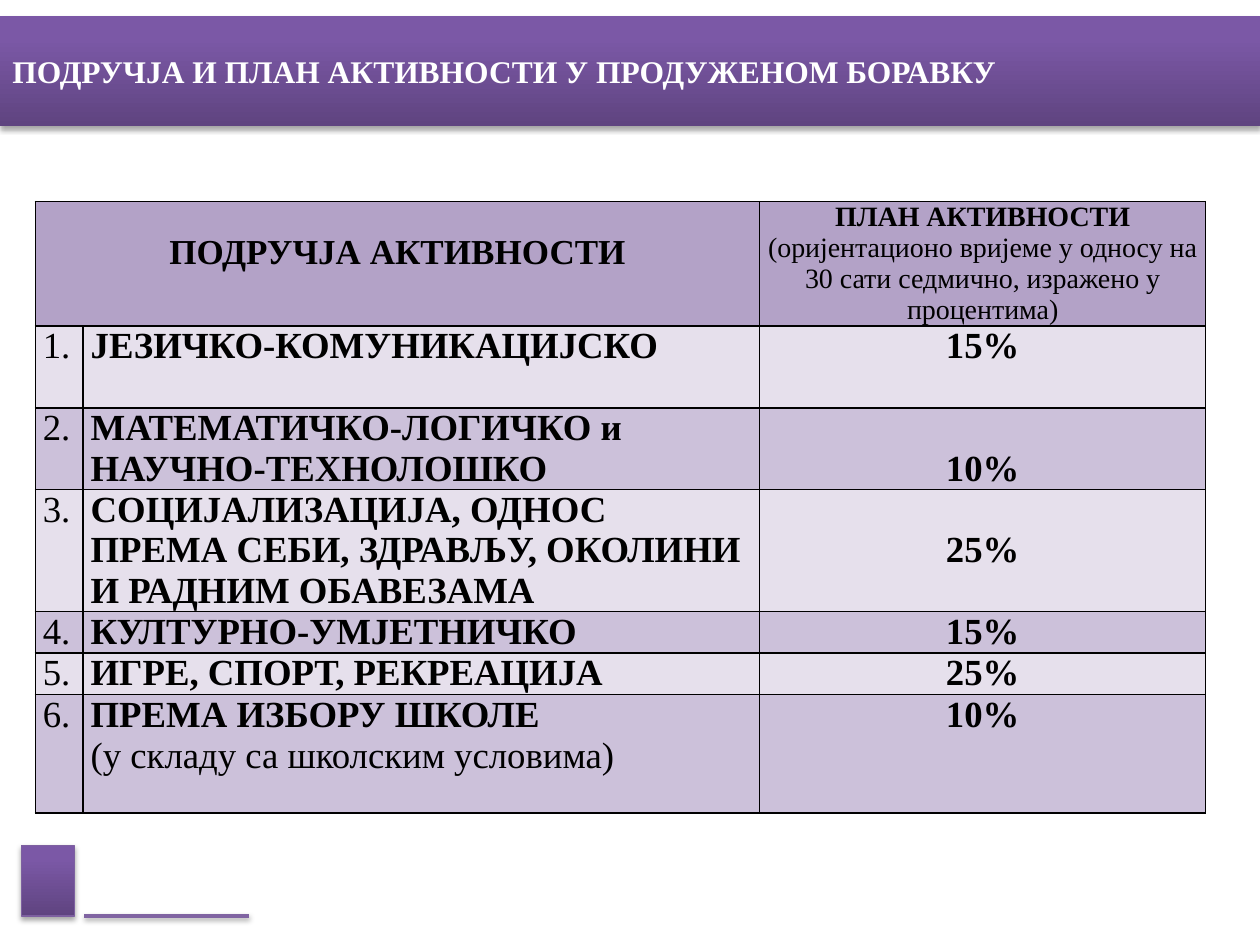
from lxml.etree import SubElement
from pptx import Presentation
from pptx.dml.color import RGBColor
from pptx.enum.shapes import MSO_CONNECTOR, MSO_SHAPE
from pptx.enum.text import MSO_ANCHOR, PP_ALIGN
from pptx.oxml import parse_xml
from pptx.oxml.ns import nsdecls, qn
from pptx.util import Inches, Pt

FONT = "Times New Roman"
COLUMNS = [0.38, 5.37, 3.54]
ROWS = [0.98, 0.65, 0.65, 0.97, 0.33, 0.33, 0.94]
BANDS = ["E6E0EC", "CCC1DA"]
GRADIENT = [(0, "5F4480"), (80, "7B58A6"), (100, "7C57A8")]
TOP, MIDDLE, BOTTOM = MSO_ANCHOR.TOP, MSO_ANCHOR.MIDDLE, MSO_ANCHOR.BOTTOM
AREAS = [
    (["ЈЕЗИЧКО-КОМУНИКАЦИЈСКО"], "15%", TOP),
    (["МАТЕМАТИЧКО-ЛОГИЧКО и НАУЧНО-ТЕХНОЛОШКО"], "10%", BOTTOM),
    (["СОЦИЈАЛИЗАЦИЈА, ОДНОС ПРЕМА СЕБИ, ЗДРАВЉУ, OКОЛИНИ И РАДНИМ ОБАВЕЗАМА"],
     "25%", MIDDLE),
    (["КУЛТУРНО-УМЈЕТНИЧКО"], "15%", TOP),
    (["ИГРЕ, СПОРТ, РЕКРЕАЦИЈА"], "25%", TOP),
    (["ПРЕМА ИЗБОРУ ШКОЛЕ", "(у складу са школским условима)"], "10%", TOP),
]


def color(value):
    return RGBColor.from_string(value)


def add_shadow(shape, opacity, distance):
    shape._element.spPr.append(parse_xml(
        f'<a:effectLst {nsdecls("a")}><a:outerShdw blurRad="{Pt(3.1)}" '
        f'dist="{Pt(distance)}" dir="5400000" rotWithShape="0">'
        f'<a:srgbClr val="000000"><a:alpha val="{opacity * 1000}"/></a:srgbClr>'
        '</a:outerShdw></a:effectLst>'))


def add_gradient_block(slide, left, top, width, height, outline=None):
    block = slide.shapes.add_shape(
        MSO_SHAPE.RECTANGLE, Inches(left), Inches(top), Inches(width), Inches(height))
    block.fill.gradient()
    stops = block._element.spPr.find(qn("a:gradFill")).find(qn("a:gsLst"))
    stops.clear()
    for position, value in GRADIENT:
        stop = SubElement(stops, qn("a:gs"), pos=str(position * 1000))
        SubElement(stop, qn("a:srgbClr"), val=value)
    block.fill.gradient_angle = 90
    if outline:
        block.line.color.rgb = color(outline)
        block.line.width = Pt(0.75)
    else:
        block.line.fill.background()
    add_shadow(block, 35, 1.8)
    return block


def style_paragraph(paragraph, text, size, bold, align, value="000000"):
    paragraph.text = text
    paragraph.alignment = align
    font = paragraph.font
    font.name, font.size, font.bold = FONT, Pt(size), bold
    font.color.rgb = color(value)


def add_banner(slide, left, top, width, height):
    banner = add_gradient_block(slide, left, top, width, height)
    frame = banner.text_frame
    frame.word_wrap = True
    frame.vertical_anchor = MIDDLE
    style_paragraph(frame.paragraphs[0],
                    "ПОДРУЧЈА И ПЛАН АКТИВНОСТИ У ПРОДУЖЕНОМ БОРАВКУ",
                    18, True, PP_ALIGN.LEFT, "FFFFFF")


def add_corner_mark(slide, left, top, width, height):
    base = Inches(top + height)
    rule = slide.shapes.add_connector(
        MSO_CONNECTOR.STRAIGHT, Inches(left + 0.5), base, Inches(left + width), base)
    rule.line.color.rgb = color("8064A2")
    rule.line.width = Pt(2)
    add_shadow(rule, 38, 1.6)
    add_gradient_block(slide, left, top, 0.42, height, "7D60A0")


def format_cell(cell, fill):
    properties = cell._tc.get_or_add_tcPr()
    for side in ("lnL", "lnR", "lnT", "lnB"):
        properties.append(parse_xml(
            f'<a:{side} {nsdecls("a")} w="{Pt(1)}"><a:solidFill>'
            f'<a:srgbClr val="000000"/></a:solidFill></a:{side}>'))
    cell.fill.solid()
    cell.fill.fore_color.rgb = color(fill)
    cell.margin_left = cell.margin_right = Inches(0.06)
    cell.margin_top = cell.margin_bottom = 0


def fill_cell(cell, lines, size, align, anchor=TOP):
    cell.vertical_anchor = anchor
    frame = cell.text_frame
    for index, (text, bold) in enumerate(lines):
        paragraph = frame.add_paragraph() if index else frame.paragraphs[0]
        style_paragraph(paragraph, text, size, bold, align)


def add_plan_table(slide, left, top, width, height):
    table = slide.shapes.add_table(
        len(ROWS), len(COLUMNS), Inches(left), Inches(top),
        Inches(width), Inches(height)).table
    for column, share in zip(table.columns, COLUMNS):
        column.width = Inches(width * share / sum(COLUMNS))
    for row, share in zip(table.rows, ROWS):
        row.height = Inches(height * share / sum(ROWS))
    for index, row in enumerate(table.rows):
        for cell in row.cells:
            format_cell(cell, BANDS[(index - 1) % 2] if index else "B3A2C7")

    heading = table.cell(0, 0)
    heading.merge(table.cell(0, 1))
    heading.margin_top = Inches(0.25)
    fill_cell(heading, [("ПОДРУЧЈА АКТИВНОСТИ", True)], 20, PP_ALIGN.CENTER)
    fill_cell(table.cell(0, 2), [
        ("ПЛАН АКТИВНОСТИ", True),
        ("(оријентационо вријеме у односу на 30 сати седмично, "
         "изражено у процентима)", False)], 16, PP_ALIGN.CENTER)

    for number, (names, percent, anchor) in enumerate(AREAS, 1):
        lines = [(name, index == 0) for index, name in enumerate(names)]
        fill_cell(table.cell(number, 0), [(f"{number}.", False)], 21, PP_ALIGN.LEFT)
        fill_cell(table.cell(number, 1), lines, 21, PP_ALIGN.LEFT)
        fill_cell(table.cell(number, 2), [(percent, True)], 21, PP_ALIGN.CENTER, anchor)


def main():
    presentation = Presentation()
    presentation.slide_width, presentation.slide_height = Inches(10), Inches(7.5)
    slide = presentation.slides.add_slide(presentation.slide_layouts[6])
    add_corner_mark(slide, 0.17, 6.71, 1.81, 0.56)
    add_banner(slide, 0, 0.13, 10, 0.87)
    add_plan_table(slide, 0.28, 1.6, 9.29, 4.84)
    presentation.save("out.pptx")


if __name__ == "__main__":
    main()
